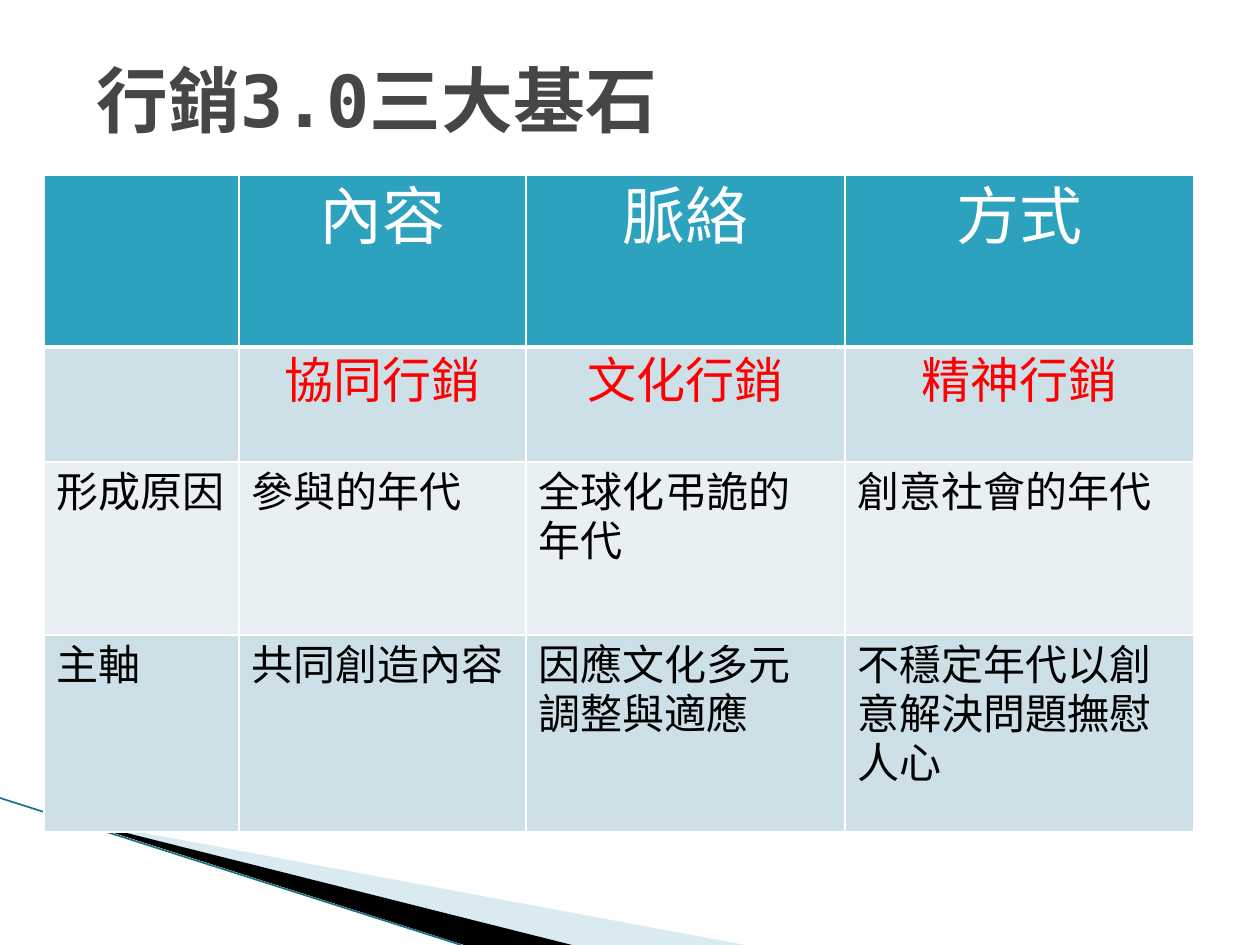
import pptx
import pptx.util
import pptx.dml.color
import pptx.enum.shapes
import pptx.enum.text
import pptx.oxml
import pptx.oxml.ns
from lxml import etree

RGBColor = pptx.dml.color.RGBColor
PP_ALIGN = pptx.enum.text.PP_ALIGN
qn = pptx.oxml.ns.qn

PX = 914400 / 126
FONT = "DejaVu Sans Mono"
WHITE = RGBColor(0xFF, 0xFF, 0xFF)
BLACK = RGBColor(0x00, 0x00, 0x00)
RED = RGBColor(0xFF, 0x00, 0x00)
GREY = RGBColor(0x46, 0x46, 0x46)
TEAL = RGBColor(0x2D, 0xA2, 0xBF)
DARK_TEAL = RGBColor(0x1B, 0x71, 0x87)
SKY = RGBColor(0xA0, 0xCB, 0xDC)
PALE_BLUE = RGBColor(0xCD, 0xE0, 0xE8)
PALE_GREY = RGBColor(0xE8, 0xF0, 0xF4)


def px(*lengths):
    return [pptx.util.Emu(round(length * PX)) for length in lengths]


def add_run(paragraph, text, size, color, bold=False):
    run = paragraph.add_run()
    run.text = text
    run.font.size = pptx.util.Pt(size)
    run.font.bold = bold
    run.font.color.rgb = color
    run.font.name = FONT
    east_asian = etree.SubElement(run.font._element, qn("a:ea"))
    east_asian.set("typeface", FONT)


presentation = pptx.Presentation()
presentation.slide_width, presentation.slide_height = px(1260, 945)
slide = presentation.slides.add_slide(presentation.slide_layouts[5])

# Title
title = slide.shapes.title
title.left, title.top, title.width, title.height = px(84, 37, 798, 123)
title.text_frame.vertical_anchor = pptx.enum.text.MSO_ANCHOR.MIDDLE
title_paragraph = title.text_frame.paragraphs[0]
title_paragraph.alignment = PP_ALIGN.LEFT
add_run(title_paragraph, "行銷3.0三大基石", 41, GREY, bold=True)

# Corner wedges and the edge line
wedges = [
    (SKY, 40, [(69, 819), (745, 945), (572, 945)]),
    (BLACK, 100, [(67, 818), (572, 945), (464, 945)]),
]
for color, opacity, points in wedges:
    builder = slide.shapes.build_freeform(*points[0], scale=PX)
    builder.add_line_segments(points[1:], close=True)
    wedge = builder.convert_to_shape()
    wedge.shadow.inherit = False
    wedge.fill.solid()
    wedge.fill.fore_color.rgb = color
    wedge.line.fill.background()
    if opacity < 100:
        fill_color = wedge._element.spPr.find(".//" + qn("a:srgbClr"))
        etree.SubElement(fill_color, qn("a:alpha")).set("val", str(opacity * 1000))

edge = slide.shapes.add_connector(
    pptx.enum.shapes.MSO_CONNECTOR.STRAIGHT, *px(0, 798, 461, 945))
edge.line.color.rgb = DARK_TEAL
edge.line.width = pptx.util.Pt(0.95)
etree.SubElement(edge._element.spPr, qn("a:effectLst"))

# Table
column_widths = [195, 287, 319, 349]
row_heights = [172, 115, 173, 197]
rows = [
    ["", "內容", "脈絡", "方式"],
    ["", "協同行銷", "文化行銷", "精神行銷"],
    ["形成原因", "參與的年代", "全球化弔詭的年代", "創意社會的年代"],
    ["主軸", "共同創造內容", "因應文化多元調整與適應", "不穩定年代以創意解決問題撫慰人心"],
]
# Fill, text size, text colour, alignment, bottom border in points
row_styles = [
    (TEAL, 36, WHITE, PP_ALIGN.CENTER, 3),
    (PALE_BLUE, 28, RED, PP_ALIGN.CENTER, 1),
    (PALE_GREY, 24, BLACK, PP_ALIGN.LEFT, 1),
    (PALE_BLUE, 24, BLACK, PP_ALIGN.LEFT, 1),
]
table = slide.shapes.add_table(
    len(rows), len(column_widths),
    *px(44, 175, sum(column_widths), sum(row_heights))).table
for column, width in zip(table.columns, px(*column_widths)):
    column.width = width
for row, height in zip(table.rows, px(*row_heights)):
    row.height = height

for row, texts, style in zip(table.rows, rows, row_styles):
    fill, size, color, alignment, bottom_width = style
    for cell, text in zip(row.cells, texts):
        properties = cell._tc.get_or_add_tcPr()
        for side in "LRTB":
            border = etree.SubElement(properties, qn("a:ln" + side))
            width = bottom_width if side == "B" else 1
            border.set("w", str(pptx.util.Pt(width)))
            border_fill = etree.SubElement(border, qn("a:solidFill"))
            etree.SubElement(border_fill, qn("a:srgbClr")).set("val", str(WHITE))
        cell.fill.solid()
        cell.fill.fore_color.rgb = fill
        if text:
            paragraph = cell.text_frame.paragraphs[0]
            paragraph.alignment = alignment
            add_run(paragraph, text, size, color)

presentation.save("out.pptx")
